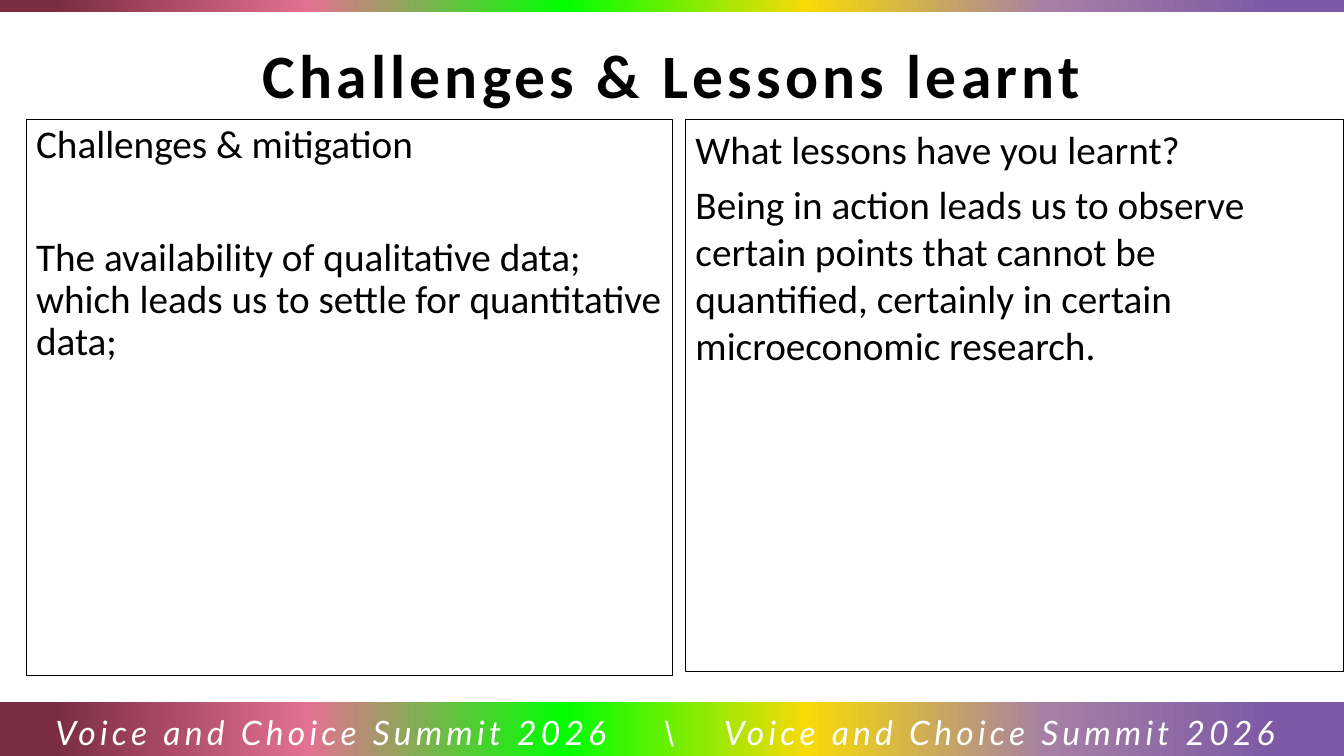
from lxml import etree
from pptx import Presentation
from pptx.dml.color import RGBColor
from pptx.enum.shapes import MSO_SHAPE
from pptx.enum.text import MSO_ANCHOR, MSO_AUTO_SIZE, PP_ALIGN
from pptx.oxml.ns import qn
from pptx.util import Inches, Pt

RECTANGLE = MSO_SHAPE.RECTANGLE
TOP, MIDDLE = MSO_ANCHOR.TOP, MSO_ANCHOR.MIDDLE
LEFT, CENTER = PP_ALIGN.LEFT, PP_ALIGN.CENTER
NO_AUTOFIT = MSO_AUTO_SIZE.NONE
BLACK = RGBColor(0x00, 0x00, 0x00)
WHITE = RGBColor(0xFF, 0xFF, 0xFF)
RAINBOW = [
    (5, RGBColor(0x7D, 0x59, 0xA5)),
    (22, RGBColor(0xA5, 0x7F, 0xA6)),
    (40, RGBColor(0xF7, 0xDA, 0x06)),
    (58, RGBColor(0x00, 0xFF, 0x00)),
    (77, RGBColor(0xE3, 0x71, 0x91)),
    (96, RGBColor(0x7B, 0x2C, 0x42)),
]
SLIDE_WIDTH = 13.33
TITLE_FONT = {"name": "Calibri", "size": Pt(44), "bold": True}
BODY_FONT = {"name": "Calibri", "size": Pt(28)}
FOOTER_FONT = {"name": "Lato", "size": Pt(24), "italic": True}
SUMMIT = "Voice and Choice Summit 2026"


def set_attributes(target, values):
    for name, value in values.items():
        setattr(target, name, value)


def add_run(paragraph, text, font, color, spacing=0):
    run = paragraph.add_run()
    run.text = text
    set_attributes(run.font, font)
    run.font.color.rgb = color
    if spacing:
        run._r.get_or_add_rPr().set("spc", str(spacing * 100))


def add_rectangle(slide, box):
    shape = slide.shapes.add_shape(RECTANGLE, *map(Inches, box))
    shape.shadow.inherit = False
    return shape


def add_rainbow_bar(slide, top, height):
    bar = add_rectangle(slide, (0, top, SLIDE_WIDTH, height))
    bar.line.fill.background()
    bar.fill.gradient()
    bar.fill.gradient_angle = 180
    stops = bar._element.spPr.find(qn("a:gradFill")).find(qn("a:gsLst"))
    for stop in list(stops):
        stops.remove(stop)
    for position, color in RAINBOW:
        stop = etree.SubElement(stops, qn("a:gs"), pos=str(position * 1000))
        etree.SubElement(stop, qn("a:srgbClr"), val=str(color))


def add_panel(slide, box, texts, line_spacing, gap):
    panel = add_rectangle(slide, box)
    panel.fill.background()
    panel.line.color.rgb = BLACK
    panel.line.width = Pt(0.75)
    frame = panel.text_frame
    set_attributes(frame, {"word_wrap": True, "vertical_anchor": TOP})
    for index, text in enumerate(texts):
        paragraph = frame.add_paragraph() if index else frame.paragraphs[0]
        set_attributes(paragraph, {
            "alignment": LEFT,
            "line_spacing": line_spacing,
            "space_before": Pt(gap if index else 0),
        })
        add_run(paragraph, text, BODY_FONT, BLACK)


def format_title(slide, text):
    title = slide.shapes.title
    set_attributes(title, {
        "left": Inches(0), "top": Inches(0.27),
        "width": Inches(SLIDE_WIDTH), "height": Inches(0.92),
    })
    frame = title.text_frame
    set_attributes(frame, {"auto_size": NO_AUTOFIT, "word_wrap": True, "vertical_anchor": MIDDLE})
    paragraph = frame.paragraphs[0]
    paragraph.alignment = CENTER
    add_run(paragraph, text, TITLE_FONT, BLACK, 3)


def add_footer(slide):
    footer = slide.shapes.add_textbox(*map(Inches, (0, 6.99, SLIDE_WIDTH, 0.49)))
    frame = footer.text_frame
    set_attributes(frame, {"word_wrap": True, "margin_left": Inches(0.55), "margin_right": 0})
    paragraph = frame.paragraphs[0]
    set_attributes(paragraph, {"alignment": LEFT, "line_spacing": 1.07})
    tabs = etree.SubElement(paragraph._p.get_or_add_pPr(), qn("a:tabLst"))
    for position in (6.02, 6.63):
        etree.SubElement(tabs, qn("a:tab"), pos=str(Inches(position)), algn="l")
    add_run(paragraph, "\t".join((SUMMIT, "\\", SUMMIT)), FOOTER_FONT, WHITE, 3)


def main():
    presentation = Presentation()
    presentation.slide_width = Inches(SLIDE_WIDTH)
    presentation.slide_height = Inches(7.5)
    slide = presentation.slides.add_slide(presentation.slide_layouts[5])
    add_rainbow_bar(slide, 0, 0.12)
    add_rainbow_bar(slide, 6.96, 0.54)
    format_title(slide, "Challenges & Lessons learnt")
    add_panel(slide, (6.8, 1.19, 6.53, 5.47), [
        "What lessons have you learnt?",
        "Being in action leads us to observe certain points that cannot be "
        "quantified, certainly in certain microeconomic research.",
    ], 1.0, 5.6)
    add_footer(slide)
    add_panel(slide, (0.26, 1.19, 6.41, 5.51), [
        "Challenges & mitigation",
        "The availability of qualitative data; which leads us to settle for "
        "quantitative data;",
    ], 0.9, 50)
    presentation.save("out.pptx")


if __name__ == "__main__":
    main()
